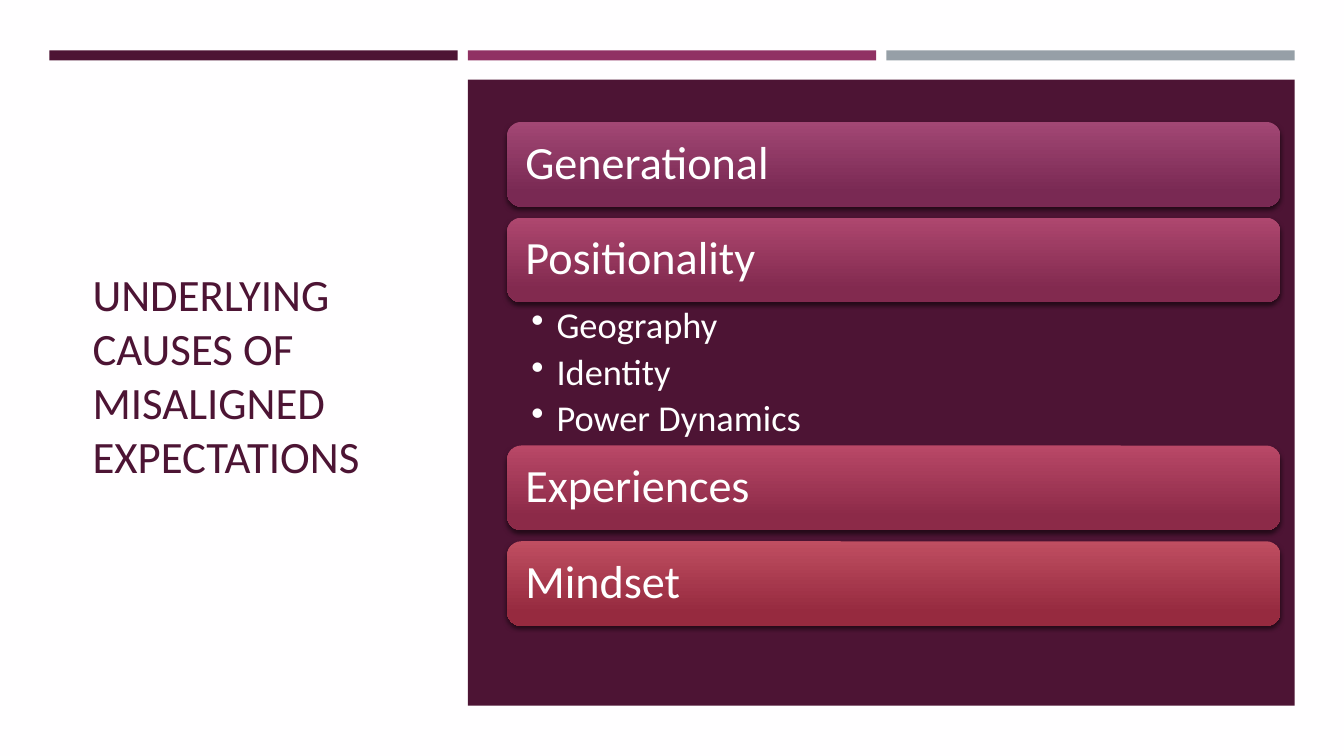
"""Build a slide listing the underlying causes of misaligned expectations."""
from dataclasses import dataclass

from lxml import etree
from pptx import Presentation
from pptx.dml.color import RGBColor
from pptx.enum.shapes import MSO_SHAPE
from pptx.enum.text import MSO_ANCHOR, PP_ALIGN
from pptx.oxml.ns import qn
from pptx.util import Inches, Pt

RECTANGLE = MSO_SHAPE.RECTANGLE
ROUNDED = MSO_SHAPE.ROUNDED_RECTANGLE
LEFT = PP_ALIGN.LEFT
MIDDLE = MSO_ANCHOR.MIDDLE
TOP = MSO_ANCHOR.TOP

TITLE = "UNDERLYING CAUSES OF MISALIGNED EXPECTATIONS"
CAUSES = [
    ("Generational", [], ("A24774", "792953")),
    ("Positionality", ["Geography", "Identity", "Power Dynamics"], ("AE476F", "822A4F")),
    ("Experiences", [], ("B94867", "8C2A48")),
    ("Mindset", [], ("BF4E61", "962A3F")),
]


@dataclass(frozen=True)
class Theme:
    font: str = "Calibri"
    paper: str = "FFFEFF"
    plum: str = "4D1434"
    white: str = "FFFFFF"
    shadow: str = "000000"
    strips: tuple = ("4D1434", "903163", "969FA7")
    title_size: int = 32
    cause_size: int = 33
    detail_size: int = 26


THEME = Theme()

SLIDE_WIDTH, SLIDE_HEIGHT = 13.33, 7.5
MARGIN, COLUMN, GUTTER = 0.49, 4.05, 0.1
STRIP_TOP, STRIP_HEIGHT = 0.5, 0.1
PANEL_TOP, PANEL_HEIGHT = 0.79, 6.21
STACK_LEFT, STACK_TOP, STACK_WIDTH = 5.03, 1.21, 7.67
BAR_HEIGHT, BAR_GAP, DETAIL_HEIGHT = 0.84, 0.11, 1.42


def column_left(index):
    return MARGIN + index * (COLUMN + GUTTER)


def add_block(page, kind, bounds):
    block = page.shapes.add_shape(kind, *map(Inches, bounds))
    block.shadow.inherit = False
    block.line.fill.background()
    return block


def add_rectangle(page, bounds, color):
    block = add_block(page, RECTANGLE, bounds)
    block.fill.solid()
    block.fill.fore_color.rgb = RGBColor.from_string(color)


def add_shadow(block):
    effects = block.element.spPr.find(qn("a:effectLst"))
    outer = etree.SubElement(
        effects, qn("a:outerShdw"), blurRad=str(Pt(3)), dist=str(Pt(2)),
        dir="5400000", rotWithShape="0")
    color = etree.SubElement(outer, qn("a:srgbClr"), val=THEME.shadow)
    etree.SubElement(color, qn("a:alpha"), val="55000")


def write(box, lines, size, color, anchor, insets, spacing, after=0, bullet=False):
    frame = box.text_frame
    frame.word_wrap = True
    frame.vertical_anchor = anchor
    frame.margin_left, frame.margin_top, frame.margin_right, frame.margin_bottom = map(
        Inches, insets)
    for index, line in enumerate(lines):
        para = frame.add_paragraph() if index else frame.paragraphs[0]
        para.alignment = LEFT
        para.line_spacing = spacing
        para.space_after = Pt(after)
        if bullet:
            properties = para._p.get_or_add_pPr()
            properties.set("marL", str(Inches(0.25)))
            properties.set("indent", str(-Inches(0.25)))
            etree.SubElement(properties, qn("a:buChar"), char="•")
        span = para.add_run()
        span.text = line
        span.font.name = THEME.font
        span.font.size = Pt(size)
        span.font.color.rgb = RGBColor.from_string(color)


def add_cause(page, top, label, colors):
    bar = add_block(page, ROUNDED, (STACK_LEFT, top, STACK_WIDTH, BAR_HEIGHT))
    bar.fill.gradient()
    bar.fill.gradient_angle = 270
    for stop, position, color in zip(bar.fill.gradient_stops, (0, 0.84), colors):
        stop.position = position
        stop.color.rgb = RGBColor.from_string(color)
    add_shadow(bar)
    write(bar, [label], THEME.cause_size, THEME.white, MIDDLE, (0.14, 0, 0.14, 0), 0.9)


def add_text(page, bounds, *content, **options):
    box = page.shapes.add_textbox(*map(Inches, bounds))
    write(box, *content, **options)


def main():
    deck = Presentation()
    deck.slide_width, deck.slide_height = Inches(SLIDE_WIDTH), Inches(SLIDE_HEIGHT)
    page = deck.slides.add_slide(deck.slide_layouts[6])
    page.background.fill.solid()
    page.background.fill.fore_color.rgb = RGBColor.from_string(THEME.paper)

    add_text(page, (0.82, 1.14, 3.34, 5.15), [TITLE], THEME.title_size, THEME.plum,
             MIDDLE, (0.1, 0.05, 0.1, 0.05), 1.0)
    for index, color in enumerate(THEME.strips):
        add_rectangle(page, (column_left(index), STRIP_TOP, COLUMN, STRIP_HEIGHT), color)
    add_rectangle(
        page, (column_left(1), PANEL_TOP, 2 * COLUMN + GUTTER, PANEL_HEIGHT), THEME.plum)

    top = STACK_TOP
    for label, details, colors in CAUSES:
        add_cause(page, top, label, colors)
        top += BAR_HEIGHT
        if details:
            add_text(page, (STACK_LEFT, top, STACK_WIDTH, DETAIL_HEIGHT), details,
                     THEME.detail_size, THEME.white, TOP, (0.24, 0.05, 0.26, 0.05), 0.9,
                     after=0.2 * THEME.detail_size, bullet=True)
        top += DETAIL_HEIGHT if details else BAR_GAP

    deck.save("out.pptx")


if __name__ == "__main__":
    main()
